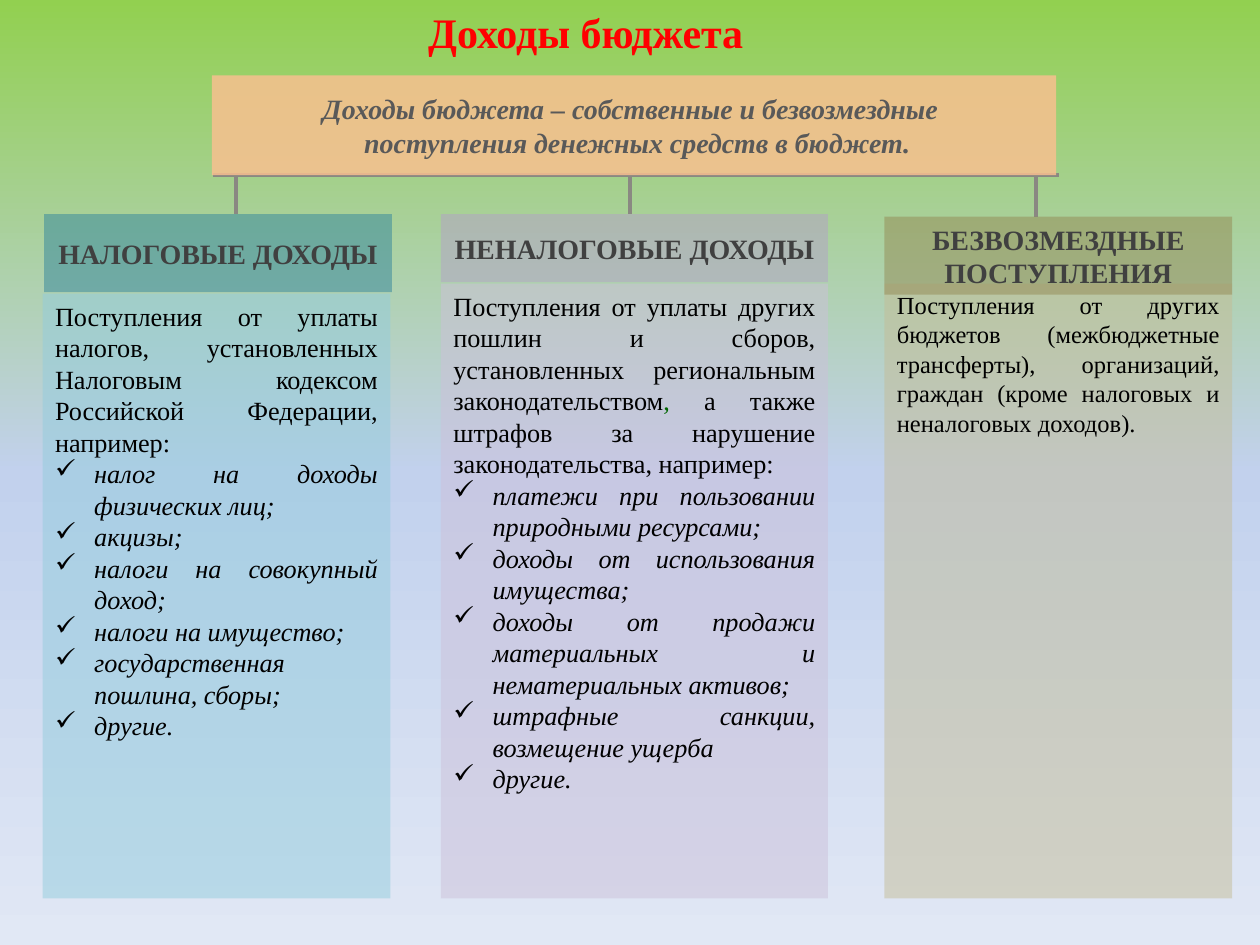
from copy import deepcopy

from lxml import etree
from pptx import Presentation
from pptx.dml.color import RGBColor
from pptx.enum.shapes import MSO_CONNECTOR, MSO_SHAPE
from pptx.enum.text import MSO_ANCHOR, MSO_AUTO_SIZE, PP_ALIGN
from pptx.oxml.ns import qn
from pptx.util import Cm, Pt

RECTANGLE, ROUNDED = MSO_SHAPE.RECTANGLE, MSO_SHAPE.ROUNDED_RECTANGLE
STRAIGHT = MSO_CONNECTOR.STRAIGHT
TOP, MIDDLE = MSO_ANCHOR.TOP, MSO_ANCHOR.MIDDLE
CENTER, JUSTIFY = PP_ALIGN.CENTER, PP_ALIGN.JUSTIFY
FIT_SHAPE = MSO_AUTO_SIZE.SHAPE_TO_FIT_TEXT

FONT = "Times New Roman"
BLACK = RGBColor(0x00, 0x00, 0x00)
RED = RGBColor(0xFF, 0x00, 0x00)
DARK_GREEN = RGBColor(0x00, 0x66, 0x00)
DARK_GRAY = RGBColor(0x40, 0x40, 0x40)
GRAY = RGBColor(0x59, 0x59, 0x59)
LINE_GRAY = RGBColor(0x8A, 0x88, 0x82)
ORANGE = RGBColor(0xFA, 0xC0, 0x90)
TEAL = RGBColor(0x31, 0x85, 0x9C)
LIGHT_TEAL = RGBColor(0x93, 0xCD, 0xDD)
PURPLE = RGBColor(0xB3, 0xA2, 0xC7)
LIGHT_PURPLE = RGBColor(0xCC, 0xC1, 0xDA)
OLIVE = RGBColor(0x94, 0x8A, 0x54)
LIGHT_OLIVE = RGBColor(0xC4, 0xBD, 0x97)
BACKDROP = [
    (0, RGBColor(0x92, 0xD0, 0x50)),
    (0.5, RGBColor(0xC2, 0xD1, 0xED)),
    (1, RGBColor(0xE1, 0xE8, 0xF5)),
]

COLUMNS_BOTTOM = 18.11
COLUMNS = [
    dict(
        box=(0.89, 4.32, 7.01), head_height=1.57, body_offset=(-0.03, 1.6),
        colors=(TEAL, LIGHT_TEAL), size=15, heading="НАЛОГОВЫЕ ДОХОДЫ",
        intro=[("Поступления от уплаты налогов, установленных Налоговым кодексом "
                "Российской Федерации, например:", BLACK)],
        examples=["налог на доходы физических лиц;", "акцизы;",
                  "налоги на совокупный доход;", "налоги на имущество;",
                  "государственная пошлина, сборы;", "другие."],
    ),
    dict(
        box=(17.83, 4.37, 7.01), head_height=1.57, body_offset=(0, 1.35),
        colors=(OLIVE, LIGHT_OLIVE), size=14, heading="БЕЗВОЗМЕЗДНЫЕ ПОСТУПЛЕНИЯ",
        intro=[("Поступления от других бюджетов (межбюджетные трансферты), "
                "организаций, граждан (кроме налоговых и неналоговых доходов).", BLACK)],
        examples=[],
    ),
    dict(
        box=(8.89, 4.32, 7.8), head_height=1.37, body_offset=(0, 1.4),
        colors=(PURPLE, LIGHT_PURPLE), size=15, heading="НЕНАЛОГОВЫЕ ДОХОДЫ",
        intro=[("Поступления от уплаты других пошлин и сборов, установленных "
                "региональным законодательством", BLACK),
               (", ", DARK_GREEN),
               ("а также штрафов за нарушение законодательства, например:", BLACK)],
        examples=["платежи при пользовании природными ресурсами;",
                  "доходы от использования имущества;",
                  "доходы от продажи материальных и нематериальных активов;",
                  "штрафные санкции, возмещение ущерба", "другие."],
    ),
]


def paint_backdrop(slide):
    """Fill the slide with a vertical gradient."""
    fill = slide.background.fill
    fill.gradient()
    fill.gradient_angle = 270
    stop_list = slide.element.find(".//" + qn("a:gsLst"))
    stop_list.append(deepcopy(stop_list[0]))
    for stop, (position, color) in zip(fill.gradient_stops, BACKDROP):
        stop.position = position
        stop.color.rgb = color


def style(paragraph, size, color, align, bold=None, italic=None):
    """Set the font and alignment of a paragraph."""
    font = paragraph.font
    font.name, font.size = FONT, Pt(size)
    font.bold, font.italic = bold, italic
    if color is not None:
        font.color.rgb = color
    paragraph.alignment = align


def add_check_mark(paragraph):
    """Give a paragraph a hanging check mark."""
    properties = paragraph._p.get_or_add_pPr()
    properties.set("marL", str(Cm(0.79)))
    properties.set("indent", str(-Cm(0.79)))
    mark = etree.Element(qn("a:buChar"), char="✓")
    properties.insert_element_before(mark, "a:tabLst", "a:defRPr", "a:extLst")


def add_panel(slide, kind, box, color, opacity, anchor):
    """Add a translucent panel and return its text frame."""
    panel = slide.shapes.add_shape(kind, *map(Cm, box))
    if kind == ROUNDED:
        panel.adjustments[0] = 0
    panel.shadow.inherit = False
    panel.line.fill.background()
    panel.fill.solid()
    panel.fill.fore_color.rgb = color
    tint = panel.element.spPr.find(".//" + qn("a:srgbClr"))
    etree.SubElement(tint, qn("a:alpha"), val=str(opacity * 1000))
    frame = panel.text_frame
    frame.word_wrap = True
    frame.vertical_anchor = anchor
    return frame


def add_line(slide, x1, y1, x2, y2):
    """Draw one gray connecting line."""
    line = slide.shapes.add_connector(STRAIGHT, Cm(x1), Cm(y1), Cm(x2), Cm(y2))
    line.line.color.rgb = LINE_GRAY
    line.line.width = Pt(2.25)
    etree.SubElement(line._element.spPr, qn("a:effectLst"))


def add_title(slide, box):
    """Add the slide title."""
    frame = slide.shapes.add_textbox(*map(Cm, box)).text_frame
    frame.word_wrap = True
    frame.auto_size = FIT_SHAPE
    title = frame.paragraphs[0]
    title.text = "Доходы бюджета"
    style(title, 24, RED, CENTER, bold=True)


def add_definition(slide, box):
    """Add the definition banner with the lines leading to the columns."""
    left, top, width, height = box
    bottom = top + height
    add_line(slide, left + 0.02, bottom, left + width + 0.05, bottom)
    for offset, drop in ((0.48, 0.79), (8.43, 0.79), (16.61, 0.84)):
        add_line(slide, left + offset, bottom, left + offset, bottom + drop)
    frame = add_panel(slide, RECTANGLE, box, ORANGE, 83, MIDDLE)
    frame.text = ("Доходы бюджета – собственные и безвозмездные \n"
                  " поступления денежных средств в бюджет.")
    for paragraph in frame.paragraphs:
        style(paragraph, 16, GRAY, CENTER, bold=True, italic=True)


def add_column(slide, box, head_height, body_offset, colors, size, heading, intro, examples):
    """Add one income type: its heading over its description."""
    left, top, width = box
    head_color, body_color = colors
    body_left, body_top = left + body_offset[0], top + body_offset[1]
    body_box = (body_left, body_top, width, COLUMNS_BOTTOM - body_top)
    body = add_panel(slide, ROUNDED, body_box, body_color, 50, TOP)
    description = body.paragraphs[0]
    style(description, size, None, JUSTIFY)
    for text, color in intro:
        run = description.add_run()
        run.text = text
        run.font.color.rgb = color
    for example in examples:
        item = body.add_paragraph()
        item.text = example
        style(item, size, BLACK, JUSTIFY, italic=True)
        add_check_mark(item)

    head = add_panel(slide, ROUNDED, (left, top, width, head_height), head_color, 50, MIDDLE)
    head.text = heading
    style(head.paragraphs[0], 16, DARK_GRAY, CENTER, bold=True)


def main():
    """Build the budget income slide."""
    deck = Presentation()
    deck.slide_width, deck.slide_height = Cm(25.4), Cm(19.05)
    slide = deck.slides.add_slide(deck.slide_layouts[6])
    paint_backdrop(slide)
    add_title(slide, (4.75, 0, 14.12, 1.27))
    add_definition(slide, (4.27, 1.52, 17.02, 2.01))
    for column in COLUMNS:
        add_column(slide, **column)
    deck.save("out.pptx")


if __name__ == "__main__":
    main()
